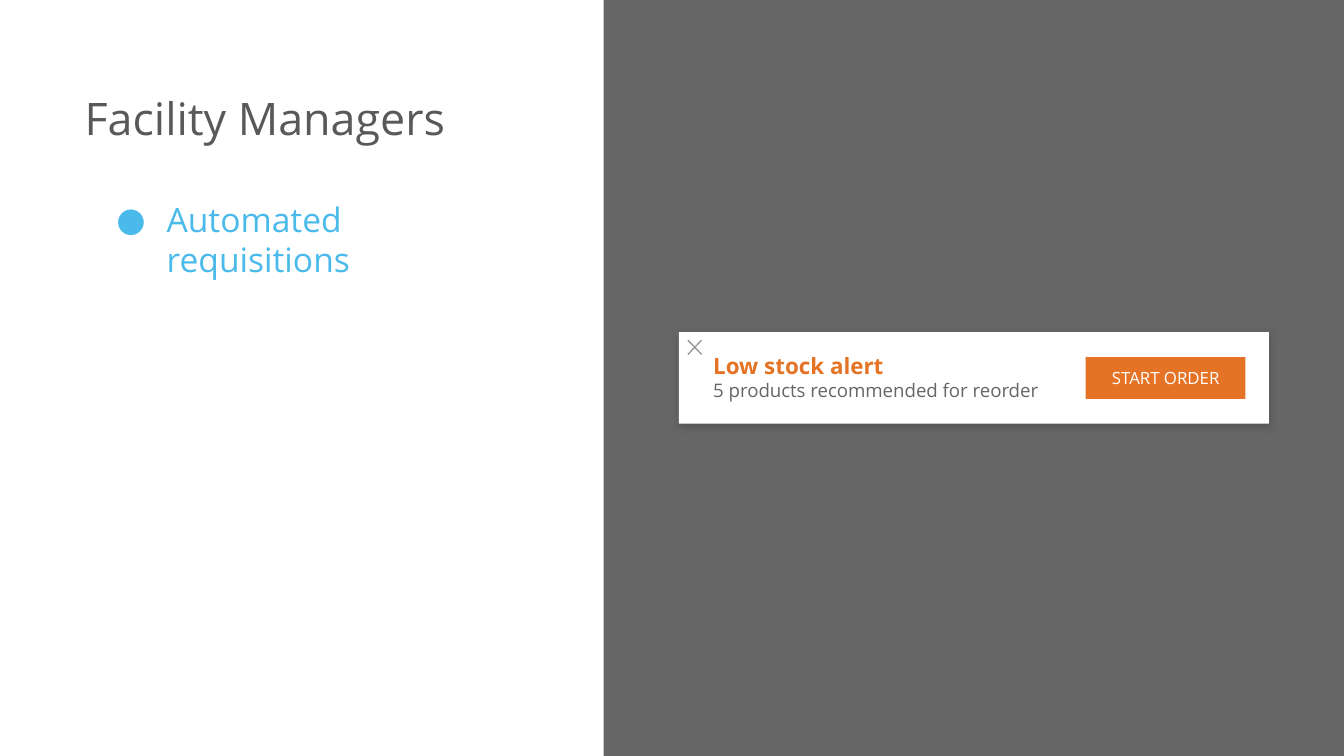
"""Build the Facility Managers slide with its low stock alert card."""
from dataclasses import dataclass

from lxml import etree
from pptx import Presentation
from pptx.dml.color import RGBColor
from pptx.enum.shapes import MSO_CONNECTOR, MSO_SHAPE
from pptx.enum.text import MSO_ANCHOR, PP_ALIGN
from pptx.oxml.ns import qn
from pptx.util import Cm, Pt

RECT = MSO_SHAPE.RECTANGLE
STRAIGHT = MSO_CONNECTOR.STRAIGHT
TOP, MIDDLE = MSO_ANCHOR.TOP, MSO_ANCHOR.MIDDLE
LEFT, CENTER = PP_ALIGN.LEFT, PP_ALIGN.CENTER


@dataclass(frozen=True)
class Theme:
    """Colours, font and type sizes of the slide."""
    font: str = "Open Sans"
    white: str = "FFFFFF"
    panel: str = "666666"
    heading: str = "58595B"
    sky: str = "4ABAEB"
    orange: str = "E57326"
    cross: str = "999999"
    shadow: str = "434343"
    title: int = 24
    body: int = 18
    alert: int = 12
    detail: int = 10
    button: int = 9


def apply(target, values):
    """Set each named attribute on the target."""
    for name, value in values.items():
        setattr(target, name, value)


def add_xml(parent, tag, **attrs):
    """Append a child element with the given attributes."""
    return etree.SubElement(parent, qn(tag), attrs)


class SlideBuilder:
    """Draw styled elements on the current slide or group."""

    def __init__(self, slide, theme):
        """Keep the slide's shapes and the theme."""
        self.shapes = slide.shapes
        self.theme = theme

    def group(self):
        """Send the elements that follow into a new group."""
        self.shapes = self.shapes.add_group_shape().shapes

    def box(self, x, y, w, h, color):
        """Add a filled rectangle without outline or shadow."""
        s = self.shapes.add_shape(RECT, Cm(x), Cm(y), Cm(w), Cm(h))
        s.shadow.inherit = False
        s.fill.solid()
        s.fill.fore_color.rgb = RGBColor.from_string(color)
        s.line.fill.background()
        return s

    def shadow(self, s):
        """Give a rectangle a soft shadow below it."""
        effects = s._element.spPr.find(qn("a:effectLst"))
        outer = add_xml(effects, "a:outerShdw", blurRad=str(Pt(4.5)),
                        dist=str(Pt(1.5)), dir="5400000", algn="bl",
                        rotWithShape="0")
        color = add_xml(outer, "a:srgbClr", val=self.theme.shadow)
        add_xml(color, "a:alpha", val="50000")

    def fill_text(self, s, lines, anchor=TOP, **paragraph):
        """Put (text, size, colour, bold) lines into a shape."""
        tf = s.text_frame
        margins = dict.fromkeys(("margin_left", "margin_top", "margin_right",
                                 "margin_bottom"), Cm(0.25))
        apply(tf, {"word_wrap": True, "vertical_anchor": anchor, **margins})
        for i, (text, size, color, bold) in enumerate(lines):
            p = tf.add_paragraph() if i else tf.paragraphs[0]
            apply(p, {"alignment": LEFT, **paragraph})
            r = p.add_run()
            r.text = text
            apply(r.font, {"name": self.theme.font, "size": Pt(size), "bold": bold})
            r.font.color.rgb = RGBColor.from_string(color)
        return tf

    def text(self, x, y, w, h, lines, **paragraph):
        """Add a wrapping text box."""
        s = self.shapes.add_textbox(Cm(x), Cm(y), Cm(w), Cm(h))
        return self.fill_text(s, lines, **paragraph)

    def bullet(self, p, color):
        """Turn a paragraph into a bulleted one."""
        pPr = p._p.get_or_add_pPr()
        for name, value in {"marL": Cm(1.27), "indent": Cm(-0.95)}.items():
            pPr.set(name, str(value))
        add_xml(add_xml(pPr, "a:buClr"), "a:srgbClr", val=color)
        add_xml(pPr, "a:buFont", typeface=self.theme.font)
        add_xml(pPr, "a:buChar", char="●")

    def line(self, x1, y1, x2, y2, color):
        """Add a thin straight line."""
        s = self.shapes.add_connector(STRAIGHT, Cm(x1), Cm(y1), Cm(x2), Cm(y2))
        s.line.color.rgb = RGBColor.from_string(color)
        s.line.width = Pt(0.75)
        add_xml(s._element.spPr, "a:effectLst")


def main():
    """Build and save the slide."""
    prs = Presentation()
    apply(prs, {"slide_width": Cm(25.4), "slide_height": Cm(14.29)})
    t = Theme()
    b = SlideBuilder(prs.slides.add_slide(prs.slide_layouts[6]), t)

    b.box(11.41, 0, 13.99, 14.29, t.panel)
    b.text(1.35, 1.32, 8.33, 1.73,
           [("Facility Managers", t.title, t.heading, False)],
           line_spacing=1.15, space_after=Pt(16))
    tf = b.text(1.63, 3.51, 8.64, 8.31,
                [("Automated requisitions", t.body, t.sky, False)],
                space_before=Pt(10), space_after=Pt(16))
    b.bullet(tf.paragraphs[0], t.sky)

    b.group()
    b.shadow(b.box(12.83, 6.28, 11.15, 1.73, t.white))
    b.text(13.23, 6.4, 6.86, 1.47,
           [("Low stock alert", t.alert, t.orange, True),
            ("5 products recommended for reorder", t.detail, t.panel, False)])
    button = b.box(20.52, 6.75, 3.02, 0.79, t.orange)
    b.fill_text(button, [("START ORDER", t.button, t.white, False)],
                anchor=MIDDLE, alignment=CENTER)
    left, right, top, bottom = 13, 13.26, 6.43, 6.7
    for start, end in ((left, right), (right, left)):
        b.line(start, top, end, bottom, t.cross)

    prs.save("out.pptx")


if __name__ == "__main__":
    main()
